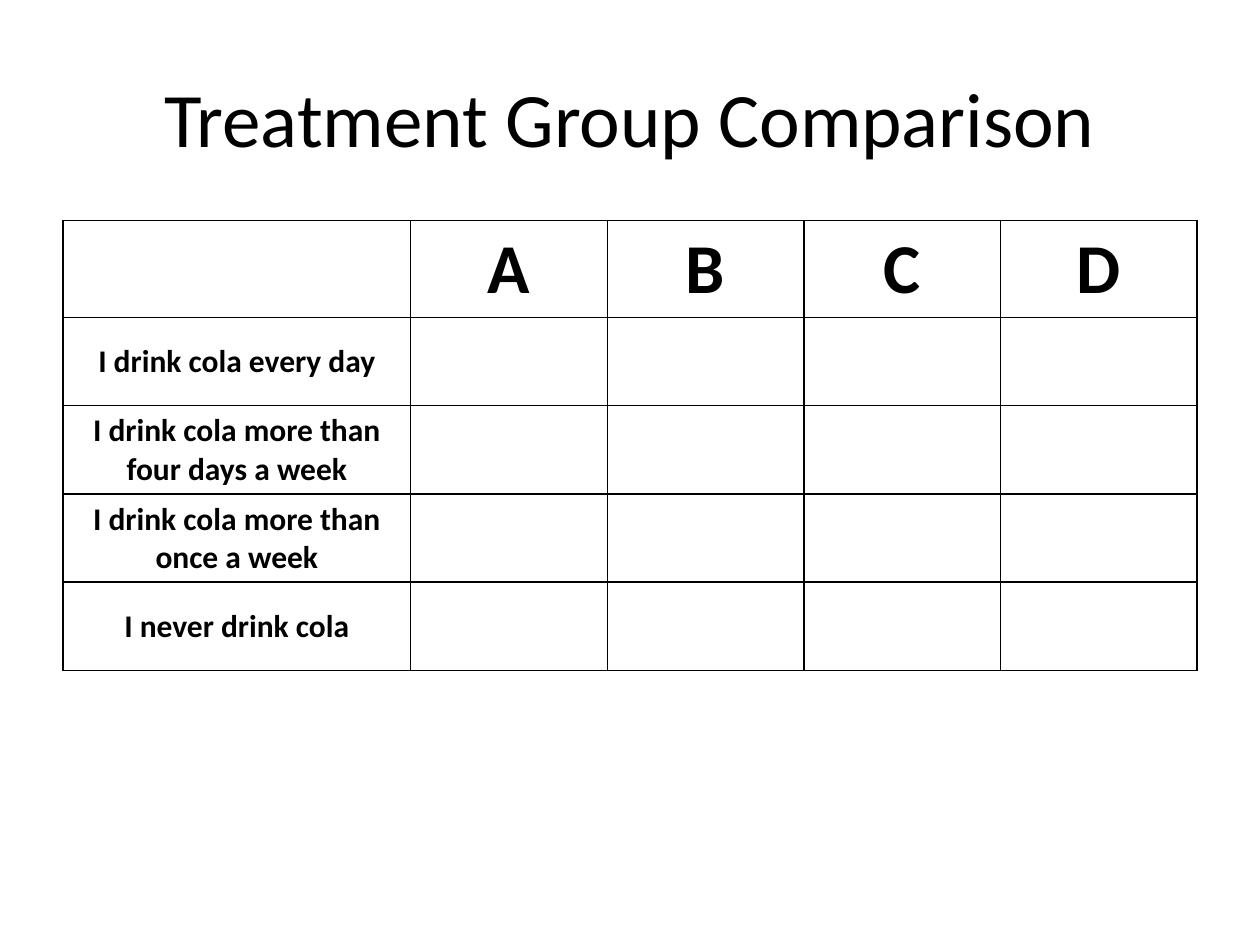
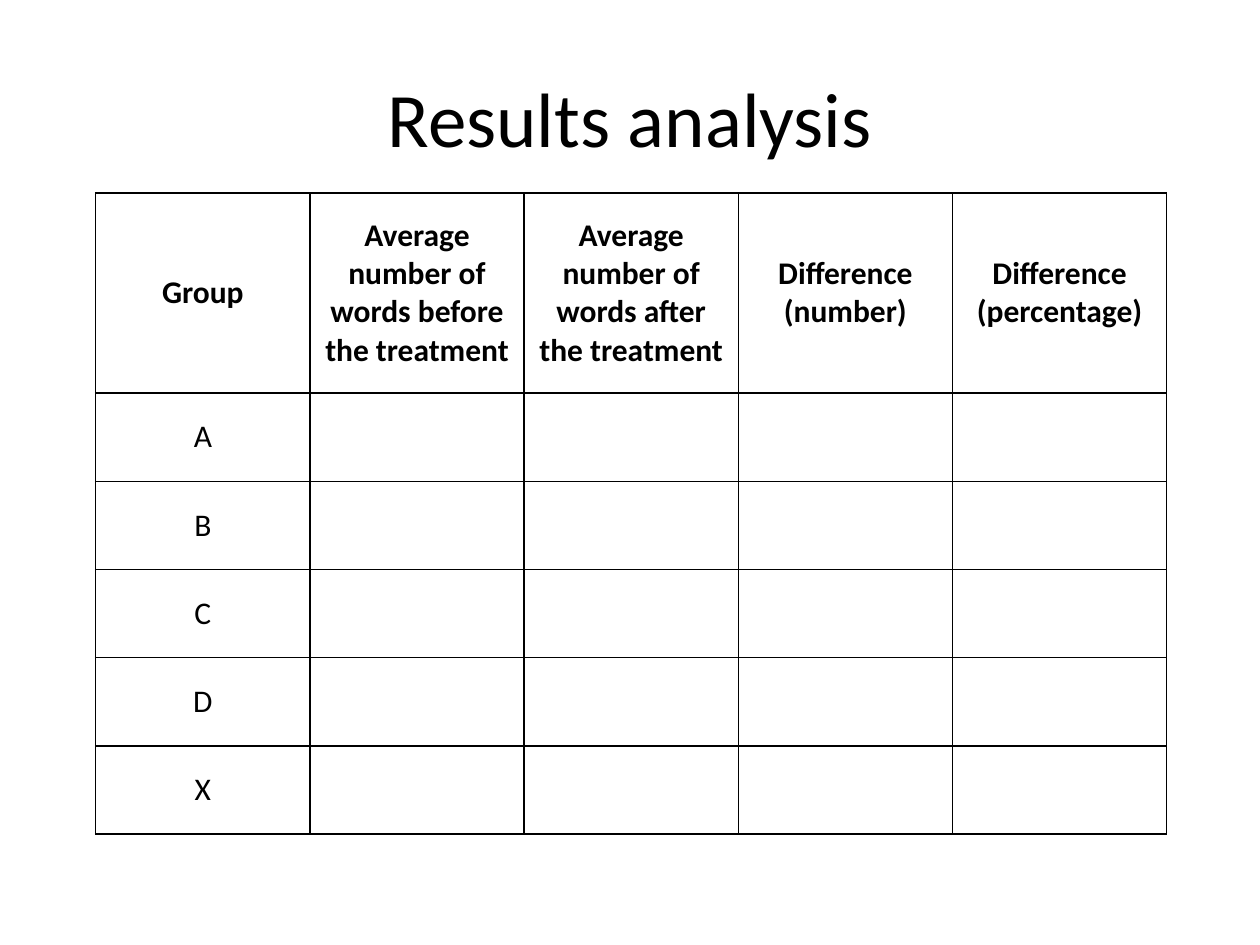
from lxml.etree import SubElement
from pptx import Presentation
from pptx.dml.color import RGBColor
from pptx.enum.text import MSO_ANCHOR, PP_ALIGN
from pptx.oxml.ns import qn
from pptx.util import Inches, Pt

COLORS = {"ink": "000000", "paper": "FFFFFF"}
FONT = "Calibri"
ROW = 0.7
SLIDES = [
    {
        "title": "Treatment Group Comparison",
        "left": 0.5, "top": 1.75, "head": 0.77,
        "cols": [2.76] + [1.56] * 4,
        "heads": ["", "A", "B", "C", "D"], "head_size": 40,
        "rows": ["I drink cola every day",
                 "I drink cola more than four days a week",
                 "I drink cola more than once a week",
                 "I never drink cola"],
        "row_bold": True,
    },
    {
        "title": "Results analysis",
        "left": 0.76, "top": 1.53, "head": 1.59,
        "cols": [1.7] * 5,
        "heads": ["Group",
                  "Average number of words before the treatment",
                  "Average number of words after the treatment",
                  "Difference (number)",
                  "Difference\n(percentage)"], "head_size": 18,
        "rows": ["A", "B", "C", "D", "X"],
        "row_bold": False,
    },
]


def write(frame, text, size=18, bold=False):
    frame.word_wrap = True
    frame.text = text
    for para in frame.paragraphs:
        para.alignment = PP_ALIGN.CENTER
        for run in para.runs:
            font = run.font
            font.name, font.size, font.bold = FONT, Pt(size), bold
            font.color.rgb = RGBColor.from_string(COLORS["ink"])


def frame_cell(cell):
    """Give a cell thin borders on all sides, no fill and middle anchoring."""
    props = cell._tc.get_or_add_tcPr()
    for side in ("a:lnL", "a:lnR", "a:lnT", "a:lnB"):
        line = SubElement(props, qn(side), w=str(Pt(1)))
        fill = SubElement(line, qn("a:solidFill"))
        SubElement(fill, qn("a:srgbClr"), val=COLORS["ink"])
    cell.fill.background()
    cell.vertical_anchor = MSO_ANCHOR.MIDDLE


def add_title(slide, text):
    box = slide.shapes.add_textbox(Inches(0.5), Inches(0.3), Inches(9), Inches(1.25))
    box.text_frame.vertical_anchor = MSO_ANCHOR.MIDDLE
    write(box.text_frame, text, size=44)


def add_grid(slide, data):
    cols = data["cols"]
    sizes = [data["head"]] + [ROW] * len(data["rows"])
    table = slide.shapes.add_table(
        len(sizes), len(cols), Inches(data["left"]), Inches(data["top"]),
        Inches(sum(cols)), Inches(sum(sizes))).table
    table.horz_banding = table.first_row = False
    for col, width in zip(table.columns, cols):
        col.width = Inches(width)
    for row, height in zip(table.rows, sizes):
        row.height = Inches(height)
    for cell in table.iter_cells():
        frame_cell(cell)
    for i, text in enumerate(data["heads"]):
        write(table.cell(0, i).text_frame, text, size=data["head_size"], bold=True)
    for i, text in enumerate(data["rows"], 1):
        write(table.cell(i, 0).text_frame, text, bold=data["row_bold"])


def main():
    deck = Presentation()
    deck.slide_width, deck.slide_height = Inches(10), Inches(7.5)
    for data in SLIDES:
        slide = deck.slides.add_slide(deck.slide_layouts[6])
        back = slide.background.fill
        back.solid()
        back.fore_color.rgb = RGBColor.from_string(COLORS["paper"])
        add_title(slide, data["title"])
        add_grid(slide, data)
    deck.save("out.pptx")


if __name__ == "__main__":
    main()
